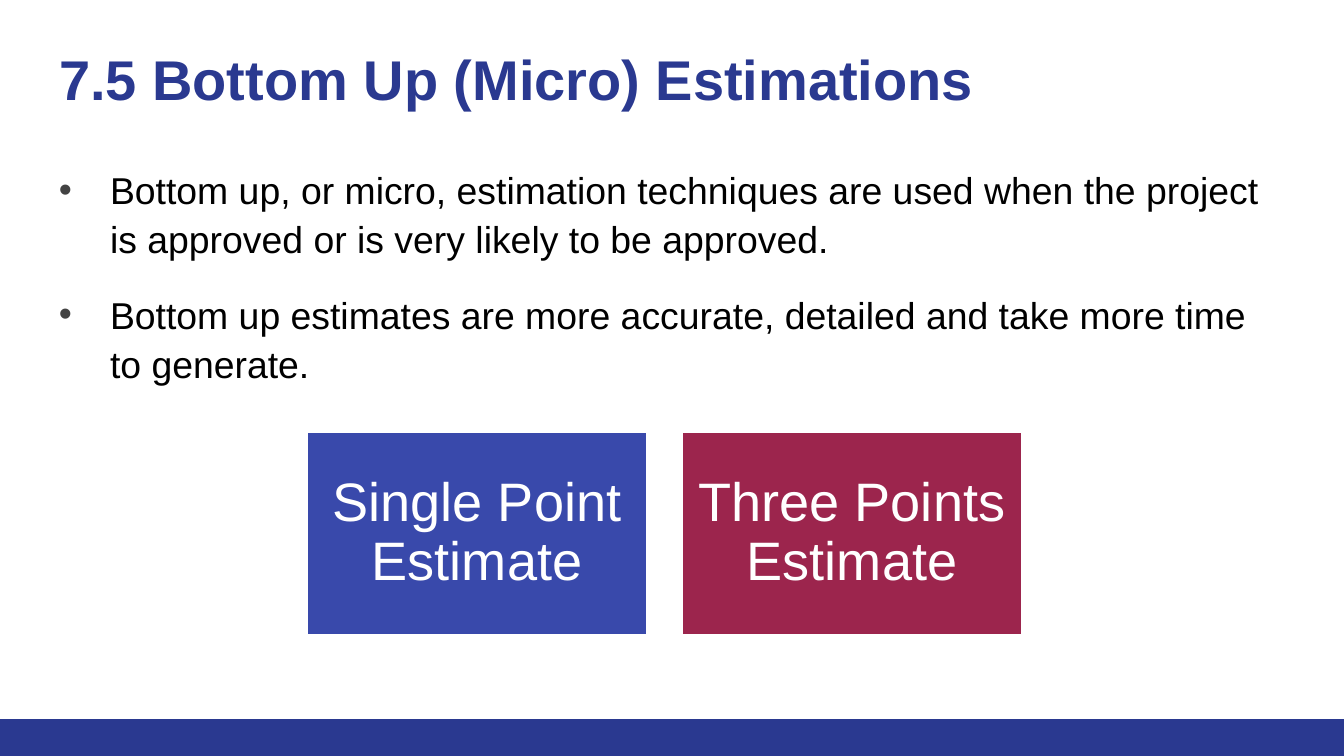
from dataclasses import dataclass

from lxml import etree
from pptx import Presentation
from pptx.dml.color import RGBColor
from pptx.enum.shapes import MSO_SHAPE
from pptx.enum.text import MSO_ANCHOR, MSO_AUTO_SIZE, PP_ALIGN
from pptx.oxml.ns import qn
from pptx.util import Inches, Pt

RECTANGLE = MSO_SHAPE.RECTANGLE
TOP, MIDDLE = MSO_ANCHOR.TOP, MSO_ANCHOR.MIDDLE
LEFT, CENTER = PP_ALIGN.LEFT, PP_ALIGN.CENTER
NO_AUTOFIT = MSO_AUTO_SIZE.NONE
TITLE_ONLY = 5


@dataclass(frozen=True)
class Theme:
    """Colours, font and type sizes of the slide."""
    font: str = "Arial"
    navy: str = "2A3990"
    indigo: str = "3949AB"
    crimson: str = "9C254D"
    white: str = "FFFFFF"
    black: str = "000000"
    bullet: str = "434343"
    title_size: int = 30
    body_size: int = 20
    card_size: int = 29


def add_bullet(para, color, font):
    """Give a paragraph a hanging round bullet."""
    properties = para._p.get_or_add_pPr()
    properties.set("marL", str(Inches(0.38)))
    properties.set("indent", str(-Inches(0.38)))
    bullet_color = etree.SubElement(properties, qn("a:buClr"))
    etree.SubElement(bullet_color, qn("a:srgbClr"), val=color)
    etree.SubElement(properties, qn("a:buFont"), typeface=font)
    etree.SubElement(properties, qn("a:buChar"), char="•")


def write(frame, lines, *, font, size, color, bold=False, align=LEFT,
          anchor=TOP, spacing=1.0, gap=0, bullet=None):
    """Fill a text frame with one formatted paragraph per line."""
    frame.word_wrap = True
    frame.auto_size = NO_AUTOFIT
    frame.vertical_anchor = anchor
    frame.margin_left = frame.margin_right = Inches(0.1)
    frame.margin_top = frame.margin_bottom = Inches(0.1)
    for index, line in enumerate(lines):
        para = frame.add_paragraph() if index else frame.paragraphs[0]
        para.alignment = align
        para.line_spacing = spacing
        para.space_before = Pt(gap if index else 0)
        if bullet:
            add_bullet(para, bullet, font)
        span = para.add_run()
        span.text = line
        span.font.name = font
        span.font.size = Pt(size)
        span.font.bold = bold
        span.font.color.rgb = RGBColor.from_string(color)


class SlideBuilder:
    """Holds the theme and the current slide."""

    def __init__(self, page, theme):
        """Keep the page and its theme."""
        self.page = page
        self.theme = theme

    def title(self, text, left, top, width, height):
        """Place and format the title placeholder."""
        box = self.page.shapes.title
        box.left, box.top = Inches(left), Inches(top)
        box.width, box.height = Inches(width), Inches(height)
        write(box.text_frame, [text], font=self.theme.font,
              size=self.theme.title_size, color=self.theme.navy, bold=True)

    def bullets(self, lines, left, top, width, height):
        """Add a bulleted text box."""
        box = self.page.shapes.add_textbox(
            Inches(left), Inches(top), Inches(width), Inches(height))
        write(box.text_frame, lines, font=self.theme.font,
              size=self.theme.body_size, color=self.theme.black,
              spacing=1.1, gap=14, bullet=self.theme.bullet)

    def rectangle(self, fill, left, top, width, height):
        """Add a plain filled rectangle."""
        box = self.page.shapes.add_shape(
            RECTANGLE, Inches(left), Inches(top), Inches(width), Inches(height))
        box.shadow.inherit = False
        box.fill.solid()
        box.fill.fore_color.rgb = RGBColor.from_string(fill)
        box.line.fill.background()
        return box

    def card(self, text, fill, left, top, width, height):
        """Add a coloured card with a centred label."""
        box = self.rectangle(fill, left, top, width, height)
        box.line.color.rgb = RGBColor.from_string(self.theme.white)
        box.line.width = Pt(2)
        write(box.text_frame, [text], font=self.theme.font,
              size=self.theme.card_size, color=self.theme.white,
              align=CENTER, anchor=MIDDLE, spacing=0.9)


def main():
    """Build and save the deck."""
    theme = Theme()
    deck = Presentation()
    deck.slide_width = Inches(10)
    deck.slide_height = deck.slide_width * 9 // 16
    page = deck.slides.add_slide(deck.slide_layouts[TITLE_ONLY])
    builder = SlideBuilder(page, theme)

    builder.rectangle(theme.navy, 0, 5.35, 10, 0.28)
    builder.title("7.5 Bottom Up (Micro) Estimations", 0.34, 0.23, 9.32, 0.66)
    builder.bullets([
        "Bottom up, or micro, estimation techniques are used when the project "
        "is approved or is very likely to be approved.",
        "Bottom up estimates are more accurate, detailed and take more time "
        "to generate.",
    ], 0.34, 1.11, 9.32, 2.21)

    card_width, card_gap = 2.54, 0.25
    cards = [("Single Point Estimate", theme.indigo),
             ("Three Points Estimate", theme.crimson)]
    for index, (label, fill) in enumerate(cards):
        left = 2.28 + index * (card_width + card_gap)
        builder.card(label, fill, left, 3.21, card_width, 1.52)

    deck.save("out.pptx")


if __name__ == "__main__":
    main()
